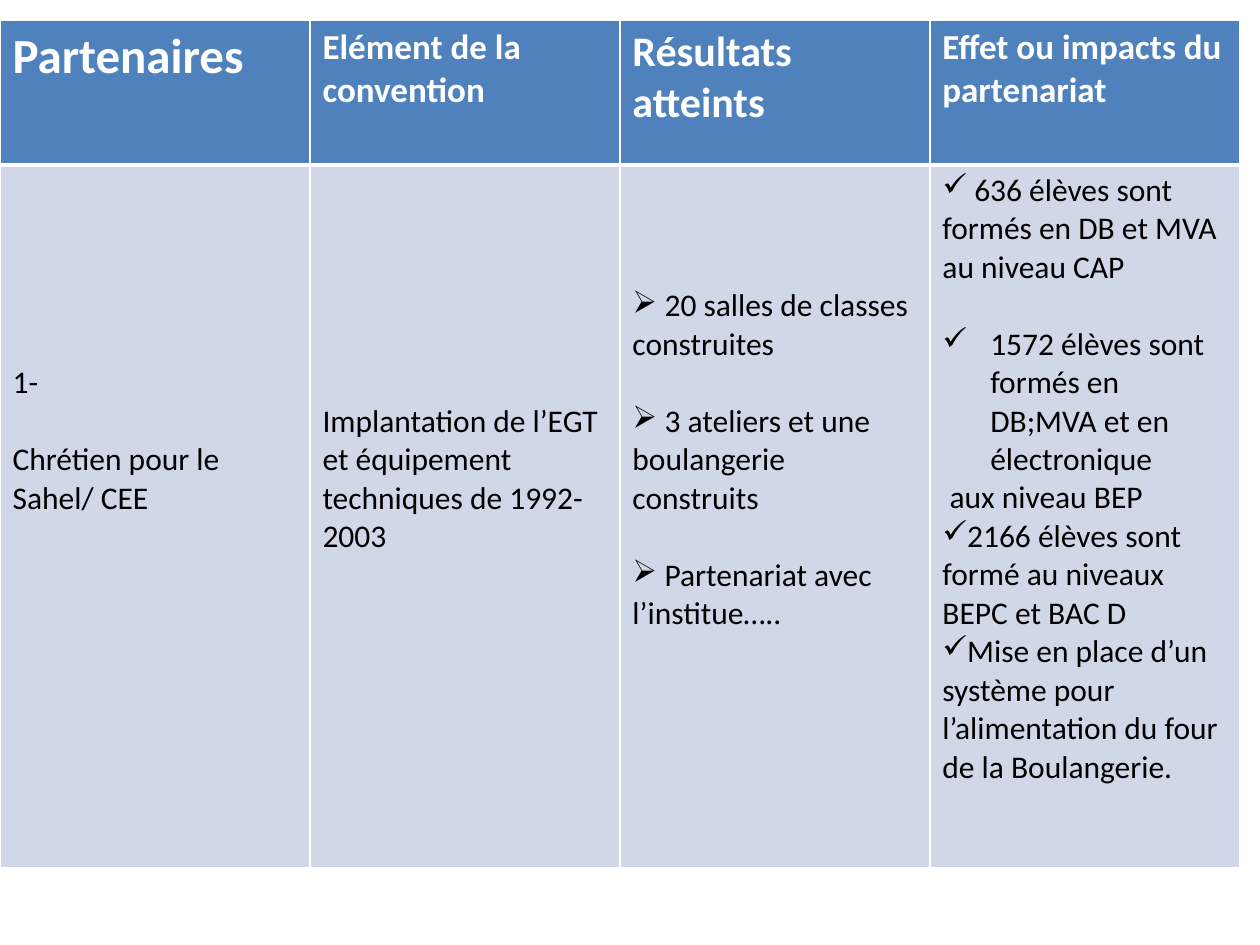
from lxml import etree
from pptx import Presentation
from pptx.dml.color import RGBColor
from pptx.oxml import ns
from pptx.util import Inches, Pt

COLOURS = {"header": "4F81BD", "body": "D0D8E8", "white": "FFFFFF", "black": "000000"}
LINE_PT = 22  # height of one 18 pt line
ARROW, CHECK = "➢", "✓"

headings = [
    ("Partenaires", 28),
    ("Elément de la convention", 20),
    ("Résultats atteints", 24),
    ("Effet ou impacts du partenariat", 20),
]
# Per column: lines of space above, then (text, bullet, hanging indent, line gap before)
details = [
    (5, [("1-", None, 0, 0),
         ("Chrétien pour le Sahel/ CEE", None, 0, 1)]),
    (6, [("Implantation de l’EGT et équipement techniques de 1992-2003", None, 0, 0)]),
    (3, [(" 20 salles de classes construites", ARROW, 0, 0),
         (" 3 ateliers et une boulangerie construits", ARROW, 0, 1),
         (" Partenariat avec l’institue…..", ARROW, 0, 1)]),
    (0, [(" 636 élèves sont formés en DB et MVA au niveau CAP", CHECK, 0, 0),
         ("1572 élèves sont formés en DB;MVA et en électronique", CHECK, 0.38, 1),
         (" aux niveau BEP", None, 0, 0),
         ("2166 élèves sont formé au niveaux BEPC et BAC D", CHECK, 0, 0),
         ("Mise en place d’un système pour l’alimentation du four de la Boulangerie.",
          CHECK, 0, 0)]),
]


def style_cell(cell, fill, borders):
    """Draw white borders (side to points), then fill the cell."""
    props = cell._tc.get_or_add_tcPr()
    for side, width in borders.items():
        line = etree.SubElement(props, ns.qn(f"a:ln{side}"), w=str(Pt(width)))
        solid = etree.SubElement(line, ns.qn("a:solidFill"))
        etree.SubElement(solid, ns.qn("a:srgbClr"), val=COLOURS["white"])
    cell.fill.solid()
    cell.fill.fore_color.rgb = RGBColor.from_string(COLOURS[fill])


def write(paragraph, content, size, colour, bold):
    run = paragraph.add_run()
    run.text = content
    for name, value in {"name": "Calibri", "size": Pt(size), "bold": bold}.items():
        setattr(run.font, name, value)
    run.font.color.rgb = RGBColor.from_string(COLOURS[colour])


prs = Presentation()
prs.slide_width, prs.slide_height = Inches(10), Inches(7.5)
slide = prs.slides.add_slide(prs.slide_layouts[6])

partners = slide.shapes.add_table(
    2, 4, Inches(0), Inches(0.16), Inches(9.84), Inches(6.73)).table
partners.horz_banding = False
for column in partners.columns:
    column.width = Inches(2.46)
for row, height in zip(partners.rows, (1.15, 5.58)):
    row.height = Inches(height)

for col, (heading, size) in enumerate(headings):
    cell = partners.cell(0, col)
    style_cell(cell, "header", {"L": 1, "R": 1, "T": 1, "B": 3})
    write(cell.text_frame.paragraphs[0], heading, size, "white", True)

for col, (lines_above, items) in enumerate(details):
    cell = partners.cell(1, col)
    style_cell(cell, "body", {"L": 1, "R": 1, "T": 3, "B": 1})
    cell.margin_top = Inches(0.05) + Pt(LINE_PT * lines_above)
    for index, (content, bullet, indent, gap) in enumerate(items):
        frame = cell.text_frame
        paragraph = frame.add_paragraph() if index else frame.paragraphs[0]
        if gap:
            paragraph.space_before = Pt(LINE_PT * gap)
        if bullet:
            props = paragraph._p.get_or_add_pPr()
            props.set("marL", str(Inches(indent)))
            props.set("indent", str(-Inches(indent)))
            etree.SubElement(props, ns.qn("a:buChar"), char=bullet)
        write(paragraph, content, 18, "black", False)

prs.save("out.pptx")
